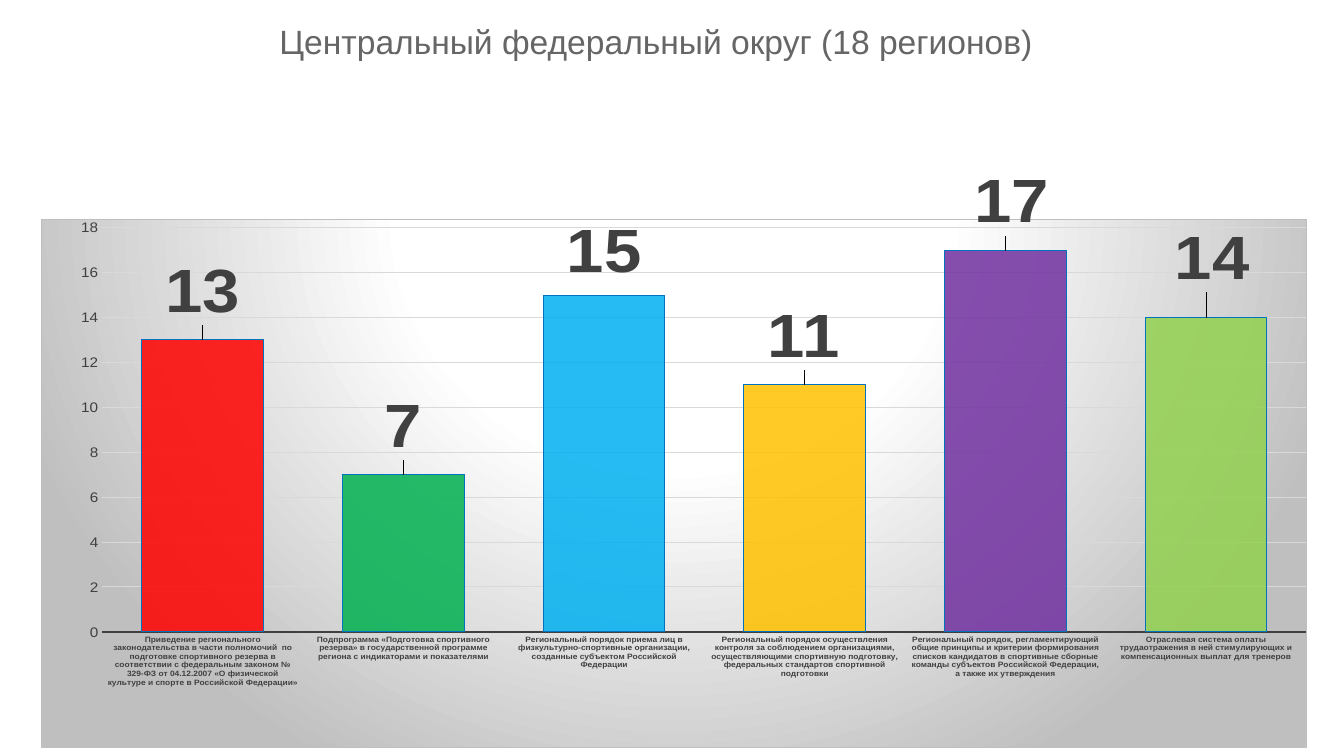
from pptx import Presentation
from pptx import util as u
from pptx.chart import data as cd
from pptx.dml.color import RGBColor
from pptx.enum import chart as ec, text
from pptx.oxml import parse_xml
from pptx.oxml.ns import nsdecls

COLORS = {
    "title": "666666", "dark": "404040", "grid": "D9D9D9", "edge": "0073BF",
    "white": "FFFFFF", "gray": "BFBFBF",
}
BARS = [
    ("Приведение регионального законодательства в части полномочий  по подготовке "
     "спортивного резерва в соответствии с федеральным законом № 329-ФЗ от 04.12.2007 "
     "«О физической культуре и спорте в Российской Федерации»", 13, "FF0000", 0, -0.02),
    ("Подпрограмма «Подготовка спортивного резерва» в государственной программе "
     "региона с индикаторами и показателями", 7, "00B050", 0, -0.02),
    ("Региональный порядок приема лиц в физкультурно-спортивные организации, "
     "созданные субъектом Российской Федерации", 15, "00B0F0", 0, -0.01),
    ("Региональный порядок осуществления контроля за соблюдением организациями, "
     "осуществляющими спортивную подготовку, федеральных стандартов спортивной "
     "подготовки", 11, "FFC000", 0, -0.02),
    ("Региональный порядок, регламентирующий общие принципы и критерии формирования "
     "списков кандидатов в спортивные сборные команды субъектов Российской Федерации, "
     "а также их утверждения", 17, "7030A0", 0.005, -0.02),
    ("Отраслевая система оплаты трудаотражения в ней стимулирующих и "
     "компенсационных выплат для тренеров", 14, "92D050", 0.005, -0.04),
]


def style(font, size, color, bold=False):
    font.name = "Arial"
    font.size = u.Pt(size)
    font.bold = bold
    font.color.rgb = RGBColor.from_string(color)


def layout(body):
    return parse_xml(f'<c:layout {nsdecls("c")}><c:manualLayout>{body}</c:manualLayout></c:layout>')


deck = Presentation()
deck.slide_width, deck.slide_height = u.Pt(960), u.Pt(540)
slide = deck.slides.add_slide(deck.slide_layouts[6])

title = slide.shapes.add_textbox(u.Pt(3.6), u.Pt(9.4), u.Pt(930), u.Pt(43)).text_frame
title.word_wrap = True
title.vertical_anchor = text.MSO_ANCHOR.MIDDLE
para = title.paragraphs[0]
para.alignment = text.PP_ALIGN.CENTER
para.line_spacing = 0.9
run = para.add_run()
run.text = "Центральный федеральный округ (18 регионов)"
style(run.font, 24, COLORS["title"])

data = cd.CategoryChartData()
data.categories = [bar[0] for bar in BARS]
data.add_series("Series 1", [bar[1] for bar in BARS])
chart = slide.shapes.add_chart(
    ec.XL_CHART_TYPE.COLUMN_CLUSTERED, u.Pt(29.5), u.Pt(119.5), u.Pt(904.3), u.Pt(414.7), data
).chart
chart.has_legend = False
chart.has_title = False
style(chart.font, 10, "000000")

cat = chart.category_axis
cat.major_tick_mark = ec.XL_TICK_MARK.NONE
style(cat.tick_labels.font, 6, COLORS["dark"], True)
cat.format.line.color.rgb = RGBColor.from_string(COLORS["dark"])
cat.format.line.width = u.Pt(1.37)

val = chart.value_axis
val.minimum_scale, val.maximum_scale, val.major_unit = 0, 18, 2
val.major_tick_mark = ec.XL_TICK_MARK.NONE
style(val.tick_labels.font, 10.9, COLORS["dark"])
val.format.line.fill.background()
grid = val.major_gridlines.format.line
grid.color.rgb = RGBColor.from_string(COLORS["grid"])
grid.width = u.Pt(0.69)

plot = chart.plots[0]
plot.gap_width = 65
plot.vary_by_categories = False
series = plot.series[0]
for i, (name, count, color, dx, dy) in enumerate(BARS):
    point = series.points[i]
    point.format.fill.solid()
    point.format.fill.fore_color.rgb = RGBColor.from_string(color)
    point.format.line.color.rgb = RGBColor.from_string(COLORS["edge"])
    point.format.line.width = u.Pt(0.69)
    style(point.data_label.font, 48, COLORS["dark"], True)
    point.data_label.position = ec.XL_LABEL_POSITION.OUTSIDE_END

root = chart.element
for fill in root.xpath(".//c:ser/c:dPt/c:spPr/a:solidFill/a:srgbClr"):
    fill.append(parse_xml(f'<a:alpha {nsdecls("a")} val="85000"/>'))
for label, bar in zip(root.xpath(".//c:dLbl"), BARS):
    label[0].addnext(layout(f'<c:x val="{bar[3]}"/><c:y val="{bar[4]}"/>'))

area = root.xpath(".//c:plotArea")[0]
for old in area.xpath("./c:layout"):
    area.remove(old)
area.insert(0, layout(
    '<c:layoutTarget val="inner"/><c:xMode val="edge"/><c:yMode val="edge"/>'
    '<c:x val="0.048"/><c:y val="0.015"/><c:w val="0.952"/><c:h val="0.766"/>'))

stops = "".join(
    f'<a:gs pos="{pos * 1000}"><a:srgbClr val="{COLORS[key]}"/></a:gs>'
    for pos, key in ((0, "white"), (39, "white"), (100, "gray")))
root.xpath("./c:chart")[0].addnext(parse_xml(
    f'<c:spPr {nsdecls("c", "a")}><a:gradFill><a:gsLst>{stops}</a:gsLst>'
    '<a:path path="circle"><a:fillToRect l="50000" t="-80000" r="50000" b="180000"/></a:path>'
    f'</a:gradFill><a:ln w="{u.Pt(0.69)}"><a:solidFill><a:srgbClr val="{COLORS["gray"]}"/>'
    '</a:solidFill></a:ln></c:spPr>'))

deck.save("out.pptx")
